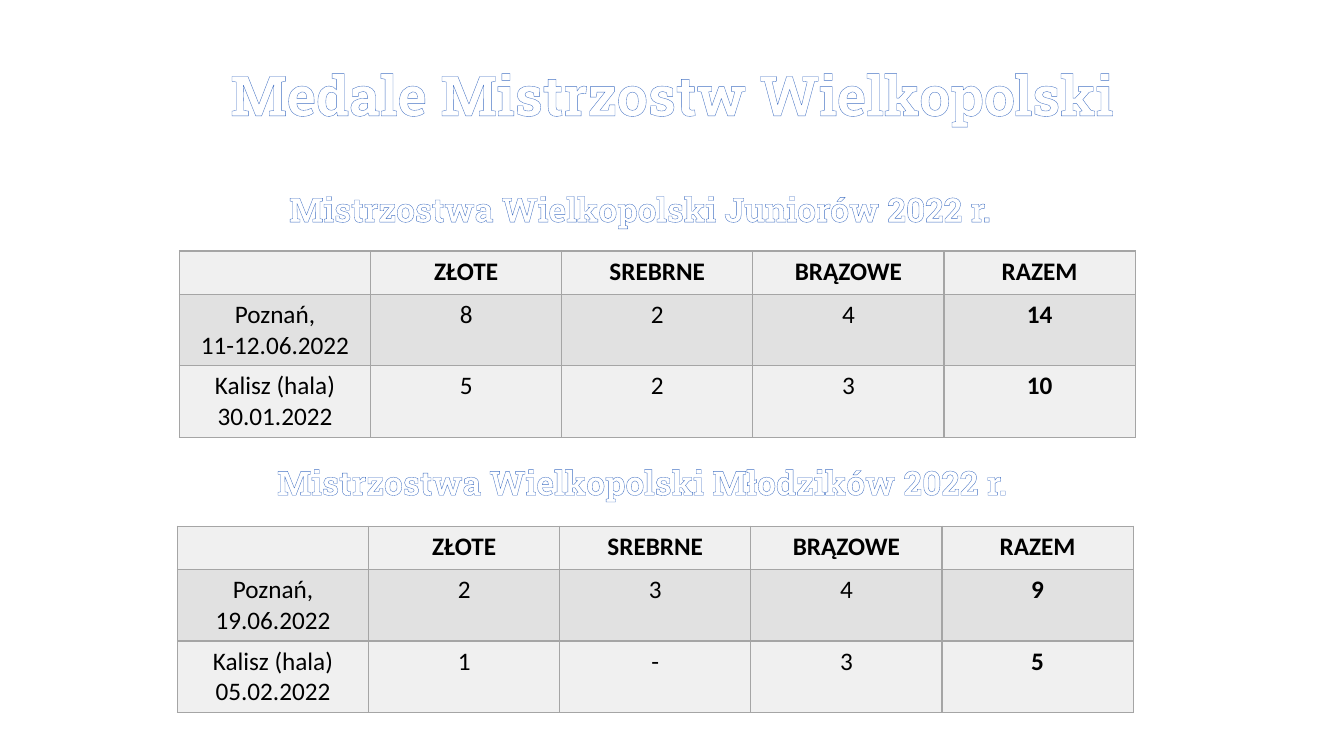
from lxml import etree
from pptx import Presentation
from pptx.dml.color import RGBColor
from pptx.enum.text import MSO_ANCHOR, PP_ALIGN
from pptx.oxml.ns import qn
from pptx.util import Inches, Pt

CENTER = PP_ALIGN.CENTER
LEFT = PP_ALIGN.LEFT
MIDDLE = MSO_ANCHOR.MIDDLE

WHITE, BLACK, BLUE, GRID = "FFFFFF", "000000", "4472C4", "A5A5A5"
LIGHT_ROW, DARK_ROW = "F0F0F0", "E1E1E1"
HEADING_FONT = {"name": "Roboto Slab", "bold": True}
CELL_FONT = {"name": "Calibri", "size": Pt(18)}

COLUMN_WIDTH = 9.48 / 5
ROW_HEIGHTS = [0.43, 0.71, 0.71]
HEADER = ["", "ZŁOTE", "SREBRNE", "BRĄZOWE", "RAZEM"]

# Heading, its box, table corner, result rows
CHAMPIONSHIPS = [
    ("Mistrzostwa Wielkopolski Juniorów 2022 r.", (2.77, 1.82, 7.79, 0.5), (1.78, 2.49),
     [["Poznań,\n11-12.06.2022", "8", "2", "4", "14"],
      ["Kalisz (hala)\n30.01.2022", "5", "2", "3", "10"]]),
    ("Mistrzostwa Wielkopolski Młodzików 2022 r.", (2.65, 4.53, 8.03, 0.5), (1.76, 5.22),
     [["Poznań, 19.06.2022", "2", "3", "4", "9"],
      ["Kalisz (hala)\n05.02.2022", "1", "-", "3", "5"]]),
]


def color(value):
    return RGBColor.from_string(value)


def format_font(font, values, fill):
    for name, value in values.items():
        setattr(font, name, value)
    font.color.rgb = color(fill)


def make_line(tag, width, value):
    line = etree.Element(qn(tag), w=str(int(Pt(width))))
    fill = etree.SubElement(line, qn("a:solidFill"))
    etree.SubElement(fill, qn("a:srgbClr"), val=value)
    return line


def add_heading(page, box, text, size, alignment=LEFT, wrap=False):
    """White lettering with a thin blue outline."""
    frame = page.shapes.add_textbox(*map(Inches, box)).text_frame
    frame.word_wrap = wrap
    frame.vertical_anchor = MIDDLE
    para = frame.paragraphs[0]
    para.alignment = alignment
    span = para.add_run()
    span.text = text
    format_font(span.font, {**HEADING_FONT, "size": Pt(size)}, WHITE)
    span.font._element.insert(0, make_line("a:ln", 0.8, BLUE))


def fill_cell(cell, text, fill, bold):
    cell.text = text
    for para in cell.text_frame.paragraphs:
        para.alignment = CENTER
        format_font(para.font, {**CELL_FONT, "bold": bold}, BLACK)
        for span in para.runs:
            format_font(span.font, {**CELL_FONT, "bold": bold}, BLACK)
    cell.fill.solid()
    cell.fill.fore_color.rgb = color(fill)
    # Borders come before the fill in the cell properties
    properties = cell._tc.get_or_add_tcPr()
    for index, side in enumerate(("a:lnL", "a:lnR", "a:lnT", "a:lnB")):
        properties.insert(index, make_line(side, 1, GRID))


def add_medal_table(page, corner, results):
    rows = [HEADER] + results
    size = (COLUMN_WIDTH * len(HEADER), sum(ROW_HEIGHTS))
    table = page.shapes.add_table(len(rows), len(HEADER), *map(Inches, corner + size)).table
    table.horz_banding = False
    for column in table.columns:
        column.width = Inches(COLUMN_WIDTH)
    for r, texts in enumerate(rows):
        table.rows[r].height = Inches(ROW_HEIGHTS[r])
        for c, text in enumerate(texts):
            bold = r == 0 or c == len(HEADER) - 1
            fill_cell(table.cell(r, c), text, DARK_ROW if r % 2 else LIGHT_ROW, bold)


def main():
    deck = Presentation()
    deck.slide_width, deck.slide_height = Inches(13.33), Inches(7.5)
    page = deck.slides.add_slide(deck.slide_layouts[6])
    add_heading(page, (0.92, 0.58, 11.5, 0.7), "Medale Mistrzostw Wielkopolski", 39.6, CENTER, True)
    for heading, box, corner, results in CHAMPIONSHIPS:
        add_heading(page, box, heading, 24)
        add_medal_table(page, corner, results)
    deck.save("out.pptx")


if __name__ == "__main__":
    main()
